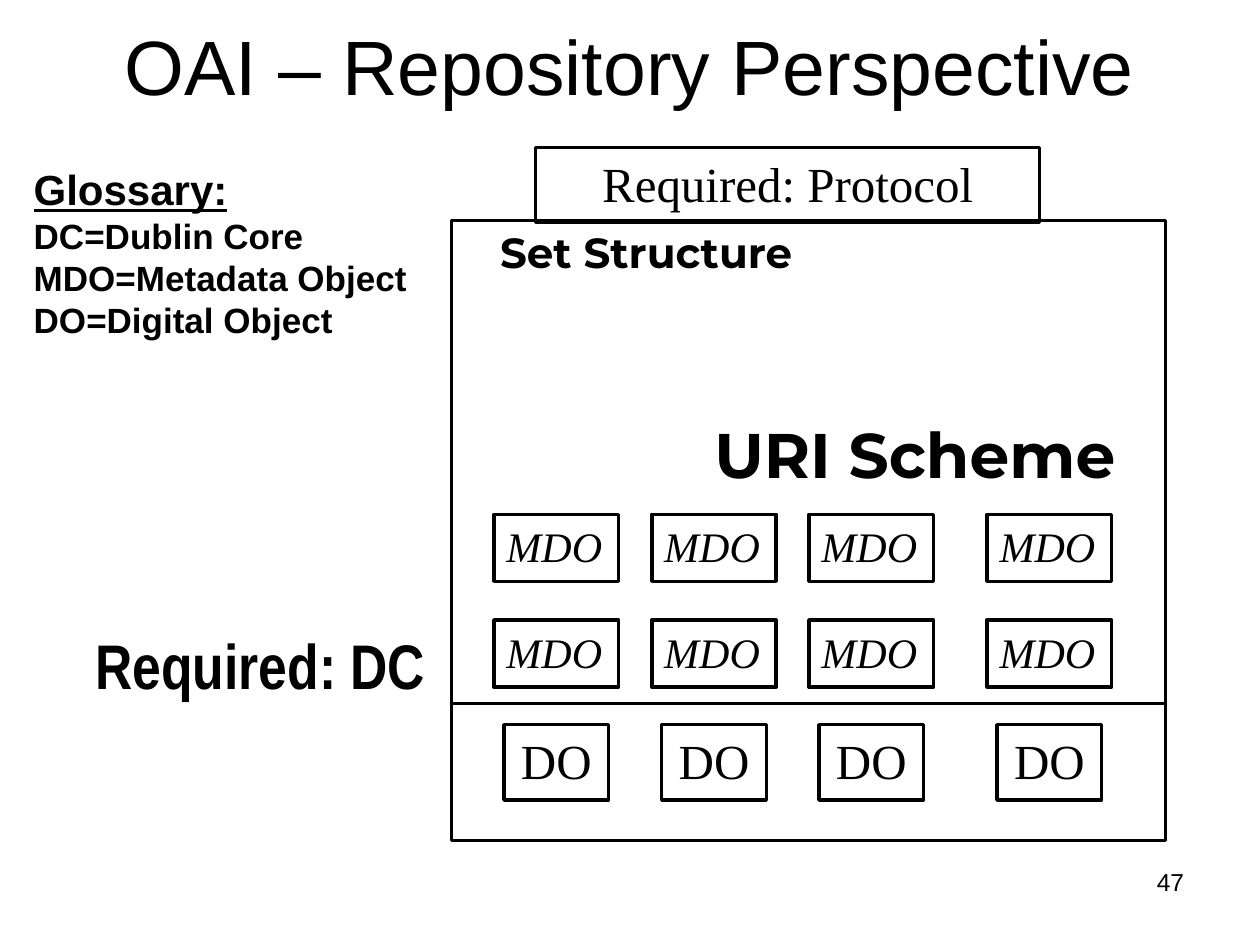
from dataclasses import dataclass

from lxml.etree import SubElement
from pptx import Presentation
from pptx.dml.color import RGBColor
from pptx.enum.shapes import MSO_CONNECTOR, MSO_SHAPE
from pptx.enum.text import MSO_ANCHOR as Anchor, PP_ALIGN as Align
from pptx.oxml.ns import qn
from pptx.util import Cm, Pt


@dataclass(frozen=True)
class Theme:
    """Colours, fonts, type sizes and line width of the slide."""
    ink: RGBColor = RGBColor(0, 0, 0)
    sans: str = "Arial"
    narrow: str = "Arial Narrow"
    serif: str = "Times New Roman"
    display: str = "Montserrat"
    title: int = 44
    banner: int = 36
    label: int = 28
    heading: int = 24
    body: int = 20
    number: int = 14
    line: int = 2


@dataclass(frozen=True)
class Box:
    """A rectangle in centimetres."""
    x: float
    y: float
    w: float
    h: float

    def inner(self, x, y, w, h):
        """Return a box placed relative to this one."""
        return Box(self.x + x, self.y + y, w, h)

    def lengths(self):
        """Return left, top, width and height as slide lengths."""
        return Cm(self.x), Cm(self.y), Cm(self.w), Cm(self.h)


THEME = Theme()


def style(p, text, size, font, align=Align.CENTER, bold=False, italic=False):
    """Fill a paragraph with text in one type style."""
    p.text = text
    p.alignment = align
    p.font.size = Pt(size)
    p.font.name = font
    p.font.bold = bold
    p.font.italic = italic
    p.font.color.rgb = THEME.ink


def add_label(slide, box, text, size, font, anchor=Anchor.TOP, wrap=False, **kind):
    """Add a one-paragraph text box, without side insets unless it wraps."""
    tf = slide.shapes.add_textbox(*box.lengths()).text_frame
    tf.word_wrap = wrap
    tf.vertical_anchor = anchor
    if not wrap:
        tf.margin_left = tf.margin_right = 0
    style(tf.paragraphs[0], text, size, font, **kind)


def add_frame(slide, box):
    """Add an unfilled outlined rectangle."""
    sp = slide.shapes.add_shape(MSO_SHAPE.RECTANGLE, *box.lengths())
    sp.shadow.inherit = False
    sp.fill.background()
    sp.line.color.rgb = THEME.ink
    sp.line.width = Pt(THEME.line)
    return sp


def add_node(slide, box, text, size, wrap=True, **kind):
    """Add an outlined rectangle with a serif label."""
    tf = add_frame(slide, box).text_frame
    tf.word_wrap = wrap
    tf.vertical_anchor = Anchor.TOP
    style(tf.paragraphs[0], text, size, THEME.serif, **kind)


def add_divider(slide, box, y):
    """Add a horizontal line across a box at height y."""
    line = slide.shapes.add_connector(
        MSO_CONNECTOR.STRAIGHT, Cm(box.x), Cm(box.y + y), Cm(box.x + box.w), Cm(box.y + y))
    line.line.color.rgb = THEME.ink
    line.line.width = Pt(THEME.line)
    SubElement(line._element.spPr, qn("a:effectLst"))


def add_glossary(slide, box):
    """Add the underlined heading and its abbreviations."""
    tf = slide.shapes.add_textbox(*box.lengths()).text_frame
    tf.word_wrap = False
    entries = ("Glossary:", "DC=Dublin Core", "MDO=Metadata Object", "DO=Digital Object")
    for i, text in enumerate(entries):
        p = tf.add_paragraph() if i else tf.paragraphs[0]
        style(p, text, THEME.body if i else THEME.heading, THEME.sans, Align.LEFT, bold=True)
        p.font.underline = i == 0


def add_repository(slide, box):
    """Add the repository frame with its protocol, objects and captions."""
    add_frame(slide, box)
    add_node(slide, box.inner(1.7, -1.48, 10.16, 1.52), "Required: Protocol", THEME.label)
    for center in (2.12, 5.3, 8.47, 12.06):
        for y in (5.92, 8.05):
            add_node(slide, box.inner(center - 1.26, y, 2.51, 1.35), "MDO", THEME.heading,
                     wrap=False, align=Align.LEFT, italic=True)
        add_node(slide, box.inner(center - 1.06, 10.16, 2.11, 1.52), "DO", THEME.label)
    add_divider(slide, box, 9.73)
    add_label(slide, box.inner(0.85, 0, 6.15, 5.36), "Set Structure", THEME.heading,
              THEME.display, bold=True)
    add_label(slide, box.inner(5.08, 3.81, 8.53, 1.8), "URI Scheme", THEME.banner,
              THEME.display, bold=True)


def main():
    """Build and save the slide."""
    prs = Presentation()
    prs.slide_width, prs.slide_height = Cm(25.4), Cm(19.05)
    slide = prs.slides.add_slide(prs.slide_layouts[6])
    add_label(slide, Box(1.9, 0.43, 21.6, 1.75), "OAI – Repository Perspective",
              THEME.title, THEME.sans, Anchor.MIDDLE, wrap=True)
    add_glossary(slide, Box(0.43, 3.18, 8.08, 3.84))
    add_label(slide, Box(1.8, 12.5, 6.9, 1.57), "Required: DC", THEME.banner,
              THEME.narrow, bold=True)
    add_repository(slide, Box(9.1, 4.45, 14.4, 12.5))
    add_label(slide, Box(18.2, 17.35, 5.92, 1.32), "47", THEME.number, THEME.sans,
              wrap=True, align=Align.RIGHT)
    prs.save("out.pptx")


if __name__ == "__main__":
    main()
